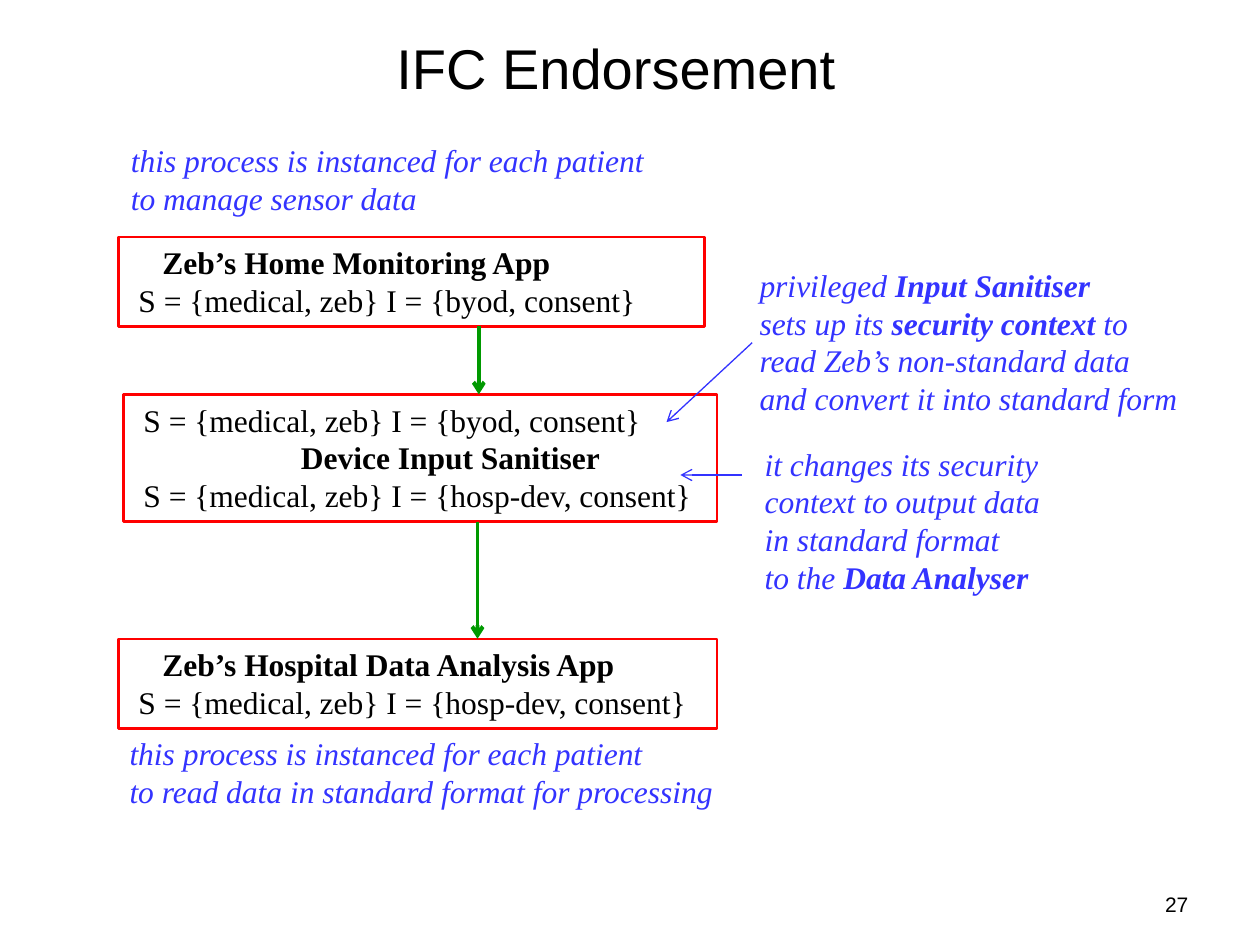
from lxml import etree
from pptx import Presentation
from pptx.dml.color import RGBColor
from pptx.enum.shapes import MSO_CONNECTOR as CONNECTOR, MSO_SHAPE as SHAPE
from pptx.enum.text import MSO_ANCHOR as ANCHOR, PP_ALIGN as ALIGN
from pptx.oxml.ns import qn
from pptx.util import Inches, Pt

BLACK = RGBColor(0x00, 0x00, 0x00)
RED = RGBColor(0xFF, 0x00, 0x00)
GREEN = RGBColor(0x00, 0x99, 0x00)
BLUE = RGBColor(0x33, 0x33, 0xFF)


def write_lines(shape, lines, color, italic=False):
    frame = shape.text_frame
    frame.word_wrap = True
    for index, (indent, line) in enumerate(lines):
        para = frame.paragraphs[0] if index == 0 else frame.add_paragraph()
        para.alignment = ALIGN.LEFT
        para._p.get_or_add_pPr().set("marL", str(Inches(indent)))
        para.font.name = "Times New Roman"
        para.font.size = Pt(18)
        para.font.italic = italic
        para.font.color.rgb = color
        for part, text in enumerate(line.split("*")):
            if text:
                span = para.add_run()
                span.text = text
                span.font.bold = part % 2 == 1


def add_arrow(page, start, tip, color, width):
    points = [Inches(value) for value in (*start, *tip)]
    arrow = page.shapes.add_connector(CONNECTOR.STRAIGHT, *points)
    arrow.line.color.rgb = color
    arrow.line.width = Pt(width)
    etree.SubElement(arrow.line._get_or_add_ln(), qn("a:tailEnd"), type="arrow")
    etree.SubElement(arrow._element.spPr, qn("a:effectLst"))


deck = Presentation()
deck.slide_width, deck.slide_height = Inches(10), Inches(7.5)
page = deck.slides.add_slide(deck.slide_layouts[5])

title = page.shapes.title
title.left, title.top = Inches(0.39), Inches(0.23)
title.width, title.height = Inches(9), Inches(0.61)
title.text_frame.text = "IFC Endorsement"
title.text_frame.vertical_anchor = ANCHOR.MIDDLE
heading = title.text_frame.paragraphs[0]
heading.alignment = ALIGN.CENTER
heading.font.name = "Arial"
heading.font.size = Pt(32)
heading.font.color.rgb = BLACK

processes = [
    ((0.94, 1.88, 4.65, 0.71), [
        (0.25, "*Zeb’s Home Monitoring App*"),
        (0.06, "S = {medical, zeb} I = {byod, consent}"),
    ]),
    ((0.98, 3.13, 4.71, 1.01), [
        (0.06, "S = {medical, zeb} I = {byod, consent}"),
        (1.31, "*Device Input Sanitiser*"),
        (0.06, "S = {medical, zeb} I = {hosp-dev, consent}"),
    ]),
    ((0.94, 5.07, 4.75, 0.71), [
        (0.25, "*Zeb’s Hospital Data Analysis App*"),
        (0.06, "S = {medical, zeb} I = {hosp-dev, consent}"),
    ]),
]
for bounds, lines in processes:
    box = page.shapes.add_shape(SHAPE.RECTANGLE, *map(Inches, bounds))
    box.shadow.inherit = False
    box.fill.background()
    box.line.color.rgb = RED
    box.line.width = Pt(1.5)
    box.text_frame.vertical_anchor = ANCHOR.TOP
    write_lines(box, lines, BLACK)

notes = [
    ((0.94, 1.07, 6.94, 0.71), [
        "this process is instanced for each patient",
        "to manage sensor data",
    ]),
    ((5.93, 2.06, 3.54, 1.31), [
        "privileged *Input Sanitiser*",
        "sets up its *security context *to read Zeb’s non-standard data "
        "and convert it into standard form",
    ]),
    ((5.97, 3.48, 3.07, 1.31), [
        "it changes its security context to output data",
        "in standard format",
        "to the *Data Analyser*",
    ]),
    ((0.93, 5.78, 6.94, 0.71), [
        "this process is instanced for each patient",
        "to read data in standard format for processing",
    ]),
]
for bounds, lines in notes:
    note = page.shapes.add_textbox(*map(Inches, bounds))
    write_lines(note, [(0, line) for line in lines], BLUE, italic=True)

add_arrow(page, (3.8, 2.59), (3.8, 3.13), GREEN, 2.25)
add_arrow(page, (3.79, 4.14), (3.79, 5.07), GREEN, 2.25)
add_arrow(page, (5.97, 2.72), (5.29, 3.35), BLUE, 0.75)
add_arrow(page, (5.89, 3.77), (5.4, 3.77), BLUE, 0.75)

number = page.shapes.add_textbox(Inches(7.17), Inches(7.03), Inches(2.36), Inches(0.32))
number.text_frame.word_wrap = True
number.text_frame.text = "27"
para = number.text_frame.paragraphs[0]
para.alignment = ALIGN.RIGHT
para.font.name = "Arial"
para.font.size = Pt(12)
para.font.color.rgb = BLACK

deck.save("out.pptx")
